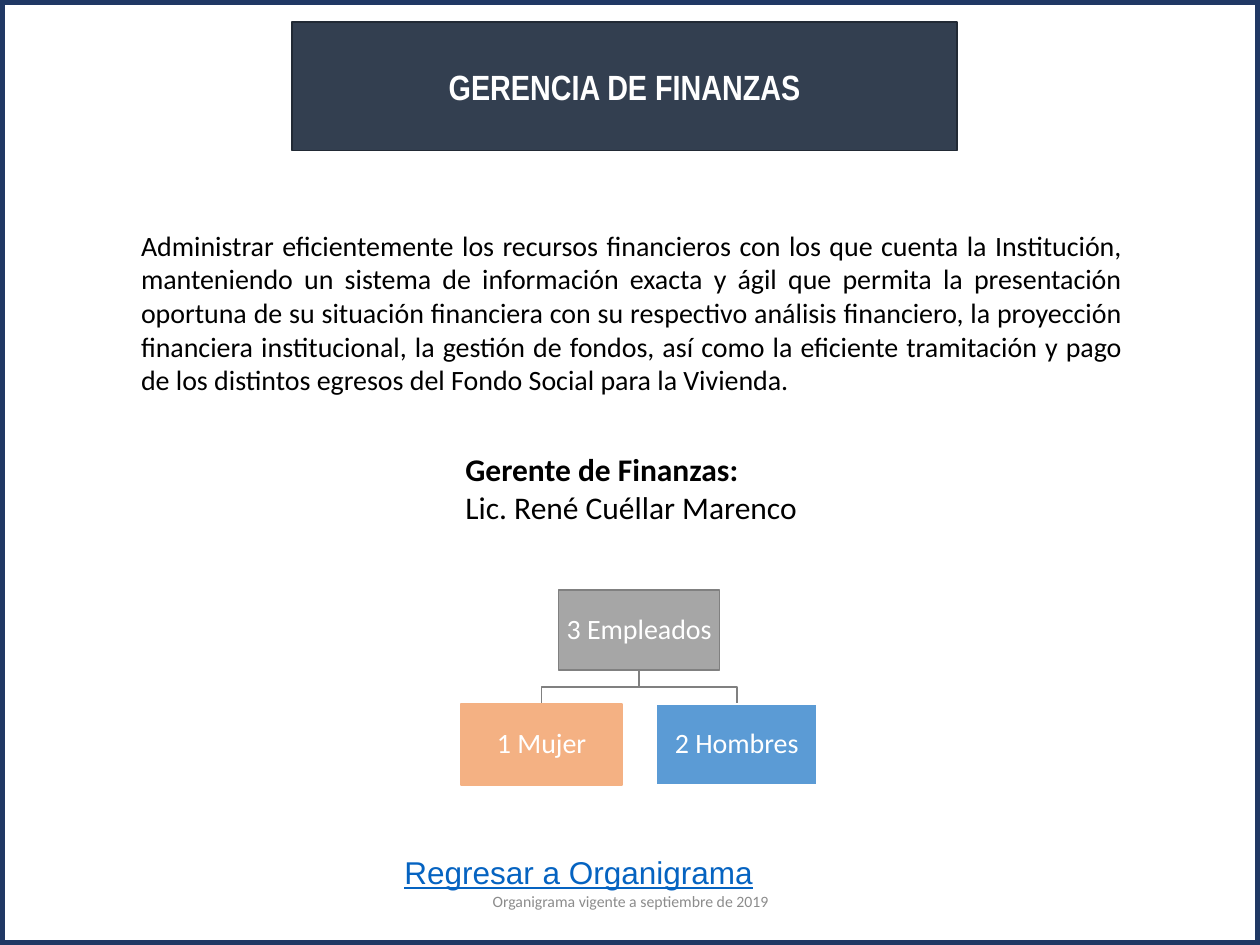
from pptx import Presentation
from pptx.dml.color import RGBColor
from pptx.enum.shapes import MSO_SHAPE
from pptx.enum.text import MSO_ANCHOR, PP_ALIGN
from pptx.util import Pt

RECTANGLE = MSO_SHAPE.RECTANGLE
MIDDLE, TOP = MSO_ANCHOR.MIDDLE, MSO_ANCHOR.TOP
LEFT, CENTER, JUSTIFY = PP_ALIGN.LEFT, PP_ALIGN.CENTER, PP_ALIGN.JUSTIFY

COLORS = {
    "frame": "203864", "banner": "333F50", "banner_line": "222A35",
    "white": "FFFFFF", "black": "000000", "link": "0563C1", "footer": "8C8C8C",
    "total": "A6A6A6", "branch": "808080", "women": "F4B183", "men": "5B9BD5",
}
MISSION = (
    "Administrar eficientemente los recursos financieros con los que cuenta la "
    "Institución, manteniendo un sistema de información exacta y ágil que permita "
    "la presentación oportuna de su situación financiera con su respectivo análisis "
    "financiero, la proyección financiera institucional, la gestión de fondos, así "
    "como la eficiente tramitación y pago de los distintos egresos del Fondo Social "
    "para la Vivienda."
)


def color(name):
    return RGBColor.from_string(COLORS[name])


def write(shape, lines, size, ink, font="Calibri", align=CENTER, anchor=TOP):
    frame = shape.text_frame
    frame.word_wrap = True
    frame.vertical_anchor = anchor
    for index, line in enumerate(lines):
        para = frame.add_paragraph() if index else frame.paragraphs[0]
        para.text = line
        para.alignment = align
        para.font.name = font
        para.font.size = Pt(size)
        para.font.color.rgb = color(ink)
    return frame


def add_text(page, box, lines, size, ink, **style):
    return write(page.shapes.add_textbox(*map(Pt, box)), lines, size, ink, **style)


def add_rectangle(page, box, fill, line, width=1):
    shape = page.shapes.add_shape(RECTANGLE, *map(Pt, box))
    shape.shadow.inherit = False
    if fill:
        shape.fill.solid()
        shape.fill.fore_color.rgb = color(fill)
    else:
        shape.fill.background()
    shape.line.color.rgb = color(line)
    shape.line.width = Pt(width)
    return shape


def add_banner(page, box, title):
    shape = add_rectangle(page, box, "banner", "banner_line")
    frame = write(shape, [title], 20, "white", font="Arial Narrow", anchor=MIDDLE)
    frame.paragraphs[0].font.bold = True


def add_manager(page, box, role, name):
    frame = add_text(page, box, [role, name], 18, "black", align=LEFT)
    frame.margin_left = Pt(43.5)
    frame.paragraphs[0].font.bold = True


def add_staff_node(page, box, label, fill, line):
    frame = write(add_rectangle(page, box, fill, line), [label], 16, "white",
                  anchor=MIDDLE)
    frame.margin_left = frame.margin_right = Pt(0.75)
    frame.margin_top = frame.margin_bottom = Pt(0.75)
    frame.paragraphs[0].line_spacing = 0.9


def add_branch(page, start, end):
    """Draw an elbow line that turns halfway down."""
    (x1, y1), (x2, y2) = start, end
    middle = (y1 + y2) / 2
    builder = page.shapes.build_freeform(Pt(x1), Pt(y1))
    builder.add_line_segments(
        [(Pt(x), Pt(y)) for x, y in ((x1, middle), (x2, middle), (x2, y2))],
        close=False)
    shape = builder.convert_to_shape()
    shape.shadow.inherit = False
    shape.fill.background()
    shape.line.color.rgb = color("branch")
    shape.line.width = Pt(1)


def add_staff_tree(page, box, total, groups):
    left, top, width, height = box
    node_width, node_height = 92, 46
    center = left + width / 2
    step = (width - node_width) / (len(groups) - 1)
    child_top = top + height - node_height
    child_lefts = [left + step * index for index in range(len(groups))]
    for child_left in child_lefts:
        add_branch(page, (center, top + node_height),
                   (child_left + node_width / 2, child_top))
    add_staff_node(page, (center - node_width / 2, top, node_width, node_height),
                   *total)
    for child_left, group in zip(child_lefts, groups):
        add_staff_node(page, (child_left, child_top, node_width, node_height), *group)


def add_footer(page, box, link, note):
    left, top, width, height = box
    frame = add_text(page, (left, top, 235.5, 29), [link], 18, "link",
                     font="Arial", align=LEFT)
    frame.paragraphs[0].font.underline = True
    add_text(page, (left + 14.5, top + height - 29, width - 14.5, 29), [note], 9,
             "footer", anchor=MIDDLE)


def main():
    deck = Presentation()
    deck.slide_width, deck.slide_height = Pt(720), Pt(540)
    page = deck.slides.add_slide(deck.slide_layouts[6])
    add_rectangle(page, (0, 0, 720, 540), None, "frame", 6)
    add_banner(page, (167, 12.5, 380, 73.5), "GERENCIA DE FINANZAS")
    add_text(page, (73.5, 127, 575, 106.5), [MISSION], 16, "black", align=JUSTIFY)
    add_manager(page, (222.5, 253.5, 276.5, 51), "Gerente de Finanzas:",
                "Lic. René Cuéllar Marenco")
    add_staff_tree(page, (263.5, 337, 203.5, 111.5),
                   ("3 Empleados", "total", "branch"),
                   [("1 Mujer", "women", "women"), ("2 Hombres", "men", "white")])
    add_footer(page, (224, 484, 258, 45.5), "Regresar a Organigrama",
               "Organigrama vigente a septiembre de 2019")
    deck.save("out.pptx")


if __name__ == "__main__":
    main()
